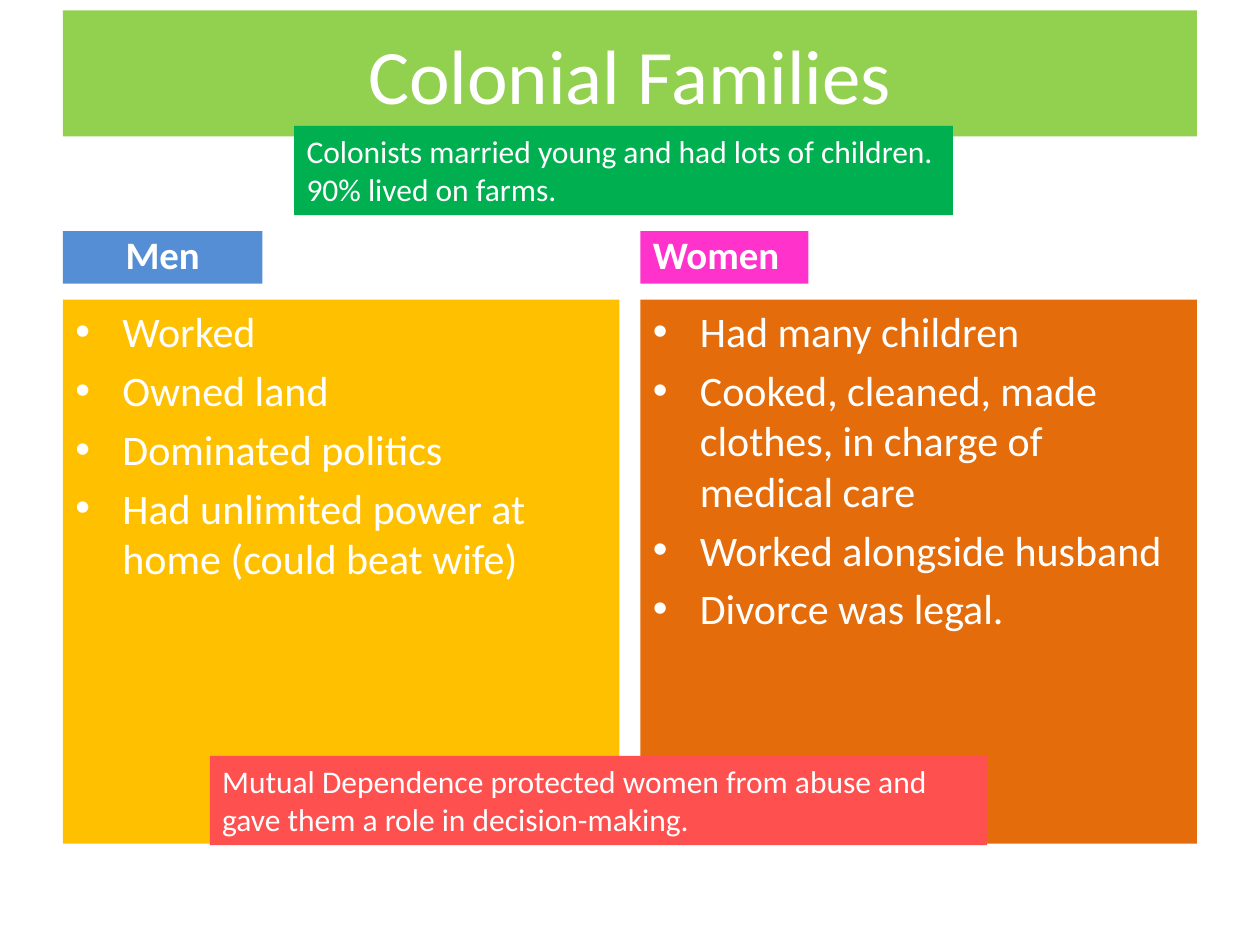
from lxml import etree
from pptx import Presentation
from pptx.dml.color import RGBColor
from pptx.enum import text
from pptx.oxml import ns
from pptx.util import Cm, Pt

LEFT, RIGHT = 1.27, 12.91  # column edges
HEAD_TOP, BODY_TOP = 4.66, 6.04
TOP, MIDDLE, BOTTOM = text.MSO_ANCHOR.TOP, text.MSO_ANCHOR.MIDDLE, text.MSO_ANCHOR.BOTTOM

prs = Presentation()
prs.slide_width, prs.slide_height = Cm(25.4), Cm(19.05)
s = prs.slides.add_slide(prs.slide_layouts[6])


def rgb(value):
    return RGBColor.from_string(value)


def add_box(x, y, w, h, fill, lines, size, anchor=TOP, center=False, bold=False, bullets=False):
    sp = s.shapes.add_textbox(Cm(x), Cm(y), Cm(w), Cm(h))
    sp.fill.solid()
    sp.fill.fore_color.rgb = rgb(fill)
    tf = sp.text_frame
    tf.word_wrap = True
    tf.vertical_anchor = anchor
    tf.text = "\n".join(lines)
    for i, p in enumerate(tf.paragraphs):
        p.alignment = text.PP_ALIGN.CENTER if center else text.PP_ALIGN.LEFT
        if bullets:
            if i:
                p.space_before = Pt(4.8)
            pPr = p._p.get_or_add_pPr()
            pPr.set("marL", str(Cm(0.95)))
            pPr.set("indent", str(-Cm(0.95)))
            etree.SubElement(pPr, ns.qn("a:buFont")).set("typeface", "Arial")
            etree.SubElement(pPr, ns.qn("a:buChar")).set("char", "•")
        for r in p.runs:
            r.font.name = "Calibri"
            r.font.size = Pt(size)
            r.font.bold = bold
            r.font.color.rgb = rgb("FFFFFF")


# Title
add_box(LEFT, 0.21, 22.86, 2.54, "92D050", ["Colonial Families"], 44, MIDDLE, center=True)

# Columns: x, heading, heading width, heading colour, centred, body colour, points
columns = [
    (LEFT, "Men", 4.02, "558ED5", True, "FFC000",
     ["Worked", "Owned land", "Dominated politics",
      "Had unlimited power at home (could beat wife)"]),
    (RIGHT, "Women", 3.39, "FF33CC", False, "E46C0A",
     ["Had many children", "Cooked, cleaned, made clothes, in charge of medical care",
      "Worked alongside husband", "Divorce was legal."]),
]
for x, heading, width, head_fill, center, body_fill, points in columns:
    add_box(x, HEAD_TOP, width, 1.06, head_fill, [heading], 22.2, BOTTOM, center, bold=True)
    add_box(x, BODY_TOP, 11.22, 10.97, body_fill, points, 24, bullets=True)

# Notes across both columns
add_box(4.23, 15.24, 15.67, 1.8, "FF5050",
        ["Mutual Dependence protected women from abuse and gave them a role in decision-making."], 18)
add_box(5.93, 2.54, 13.28, 1.8, "00B050",
        ["Colonists married young and had lots of children.", "90% lived on farms."], 18)

prs.save("out.pptx")
